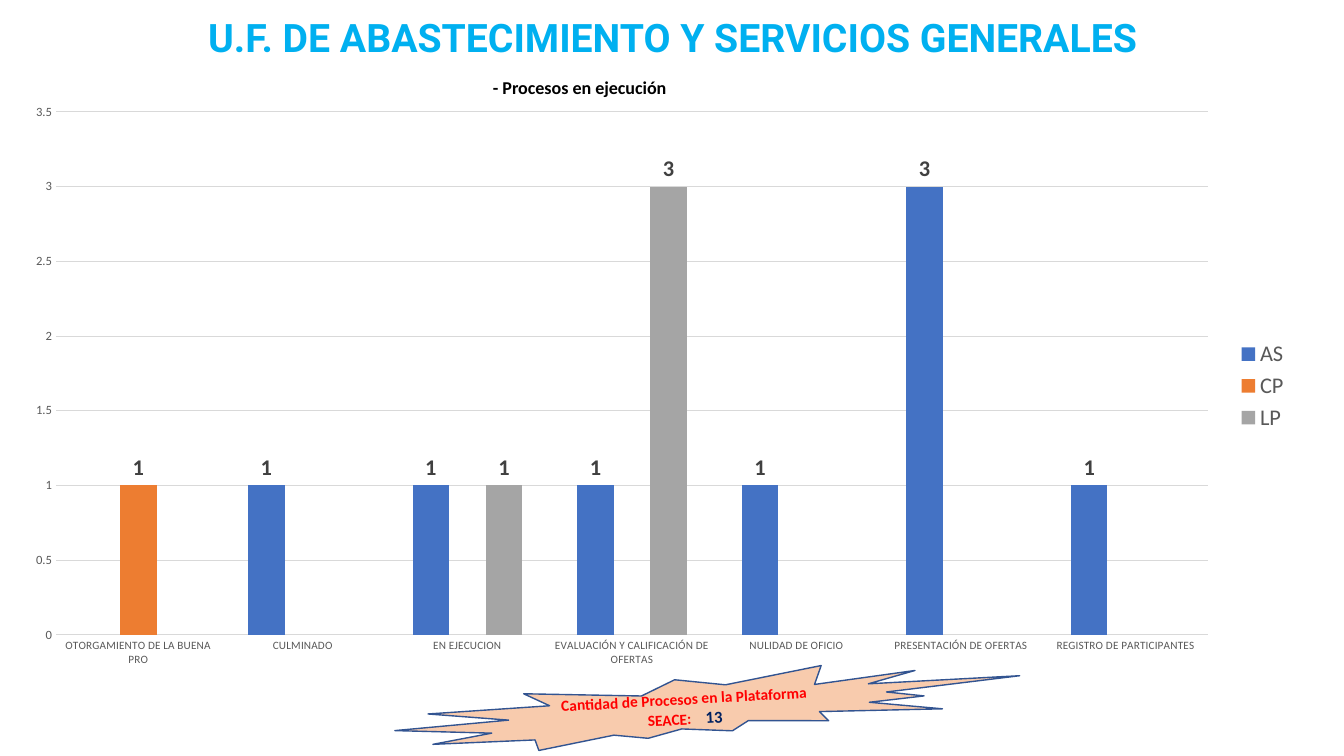
from lxml.etree import SubElement
from pptx import Presentation
from pptx.chart.data import CategoryChartData
from pptx.dml.color import RGBColor
from pptx.enum.chart import XL_CHART_TYPE, XL_LABEL_POSITION, XL_LEGEND_POSITION, XL_TICK_MARK
from pptx.enum.shapes import MSO_SHAPE
from pptx.enum.text import MSO_ANCHOR, PP_ALIGN
from pptx.oxml.ns import qn
from pptx.util import Pt

SCALE = 12192000 / 1344
SLIDE = (1344, 756)
COLORS = {
    "sky": "00B0F0", "black": "000000", "red": "FF0000",
    "navy": "002060", "peach": "F8CBAD", "outline": "325491",
    "grid": "D9D9D9", "axis": "595959", "label": "404040",
    "AS": "4472C4", "CP": "ED7D31", "LP": "A5A5A5",
}
TITLE = {
    "text": "U.F. DE ABASTECIMIENTO Y SERVICIOS GENERALES", "at": (105, 8, 1135, 57),
    "format": {"alignment": PP_ALIGN.CENTER},
    "font": {"name": "Roboto", "size": 28, "color": "sky", "bold": True},
}
SUBTITLE = {
    "text": "- Procesos en ejecución", "at": (483, 77, 862, 27),
    "format": {"alignment": PP_ALIGN.JUSTIFY, "line_spacing": 0.7},
    "font": {"size": 12.9, "color": "black", "bold": True},
}
SEAL = {"at": (394, 672, 627, 69), "rotation": -3.2}
SEAL_SPANS = [
    ("Cantidad de Procesos en la Plataforma SEACE:", {"size": 11, "color": "red", "bold": True}, 0),
    (" ", {"size": 11, "color": "red", "bold": True}, 750),
    ("13", {"size": 12, "color": "navy", "bold": True}, 0),
]
CHART_AT = (10, 93, 1289, 586)
PLOT_AT = (56, 112, 1152, 523)
CATEGORIES = [
    "OTORGAMIENTO DE LA BUENA PRO", "CULMINADO", "EN EJECUCION",
    "EVALUACIÓN Y CALIFICACIÓN DE OFERTAS", "NULIDAD DE OFICIO",
    "PRESENTACIÓN DE OFERTAS", "REGISTRO DE PARTICIPANTES",
]
SERIES = {
    "AS": (None, 1, 1, 1, 1, 3, 1),
    "CP": (1, None, None, None, None, None, None),
    "LP": (None, None, 1, 3, None, None, None),
}


def px(lengths):
    return [round(length * SCALE) for length in lengths]


def rgb(name):
    return RGBColor.from_string(COLORS[name])


def set_values(target, values):
    for key, value in values.items():
        setattr(target, key, value)


def set_font(font, size, color, name="Calibri", **flags):
    set_values(font, {"size": Pt(size), "name": name, **flags})
    font.color.rgb = rgb(color)


def add_text(page, item):
    frame = page.shapes.add_textbox(*px(item["at"])).text_frame
    frame.word_wrap = True
    para = frame.paragraphs[0]
    set_values(para, item["format"])
    span = para.add_run()
    span.text = item["text"]
    set_font(span.font, **item["font"])


def add_seal(page):
    seal = page.shapes.add_shape(MSO_SHAPE.EXPLOSION2, *px(SEAL["at"]))
    seal.rotation = SEAL["rotation"]
    seal.shadow.inherit = False
    seal.fill.solid()
    seal.fill.fore_color.rgb = rgb("peach")
    seal.line.color.rgb = rgb("outline")
    seal.line.width = Pt(1)
    seal.text_frame.word_wrap = True
    seal.text_frame.vertical_anchor = MSO_ANCHOR.MIDDLE
    para = seal.text_frame.paragraphs[0]
    para.alignment = PP_ALIGN.CENTER
    for text, font, tracking in SEAL_SPANS:
        span = para.add_run()
        span.text = text
        set_font(span.font, **font)
        if tracking:
            span.font._element.set("spc", str(tracking))


def place_plot(chart):
    """Fix the inner plot area as fractions of the chart frame."""
    plot_area = chart._chartSpace.chart.plotArea
    for old in plot_area.findall(qn("c:layout")):
        plot_area.remove(old)
    layout = SubElement(plot_area, qn("c:layout"))
    plot_area.insert(0, layout)
    manual = SubElement(layout, qn("c:manualLayout"))
    left, top, width, height = CHART_AT
    plot_left, plot_top, plot_width, plot_height = PLOT_AT
    values = {
        "layoutTarget": "inner", "xMode": "edge", "yMode": "edge",
        "x": (plot_left - left) / width, "y": (plot_top - top) / height,
        "w": plot_width / width, "h": plot_height / height,
    }
    for tag, value in values.items():
        SubElement(manual, qn(f"c:{tag}")).set("val", str(value))


def add_process_chart(page):
    data = CategoryChartData()
    data.categories = CATEGORIES
    for name, values in SERIES.items():
        data.add_series(name, values)
    chart = page.shapes.add_chart(XL_CHART_TYPE.COLUMN_CLUSTERED, *px(CHART_AT), data).chart
    set_font(chart.font, 10, "black")
    chart.has_title = False
    chart.has_legend = True
    chart.legend.position = XL_LEGEND_POSITION.RIGHT
    chart.legend.include_in_layout = False
    set_font(chart.legend.font, 16, "axis")

    for axis, size in ((chart.category_axis, 8), (chart.value_axis, 9)):
        axis.major_tick_mark = axis.minor_tick_mark = XL_TICK_MARK.NONE
        axis.format.line.fill.background()
        set_font(axis.tick_labels.font, size, "axis")
    set_values(chart.value_axis, {"minimum_scale": 0, "maximum_scale": 3.5, "major_unit": 0.5})
    grid = chart.value_axis.major_gridlines.format.line
    grid.color.rgb = rgb("grid")
    grid.width = Pt(0.75)

    plot = chart.plots[0]
    set_values(plot, {"gap_width": 150, "overlap": 0, "vary_by_categories": False})
    for series in plot.series:
        series.format.fill.solid()
        series.format.fill.fore_color.rgb = rgb(series.name)
        labels = series.data_labels
        labels.show_value = True
        labels.position = XL_LABEL_POSITION.OUTSIDE_END
        set_font(labels.font, 16, "label", bold=True)
    place_plot(chart)


def main():
    deck = Presentation()
    deck.slide_width, deck.slide_height = px(SLIDE)
    page = deck.slides.add_slide(deck.slide_layouts[6])
    add_text(page, TITLE)
    add_seal(page)
    add_process_chart(page)
    add_text(page, SUBTITLE)
    deck.save("out.pptx")


if __name__ == "__main__":
    main()
